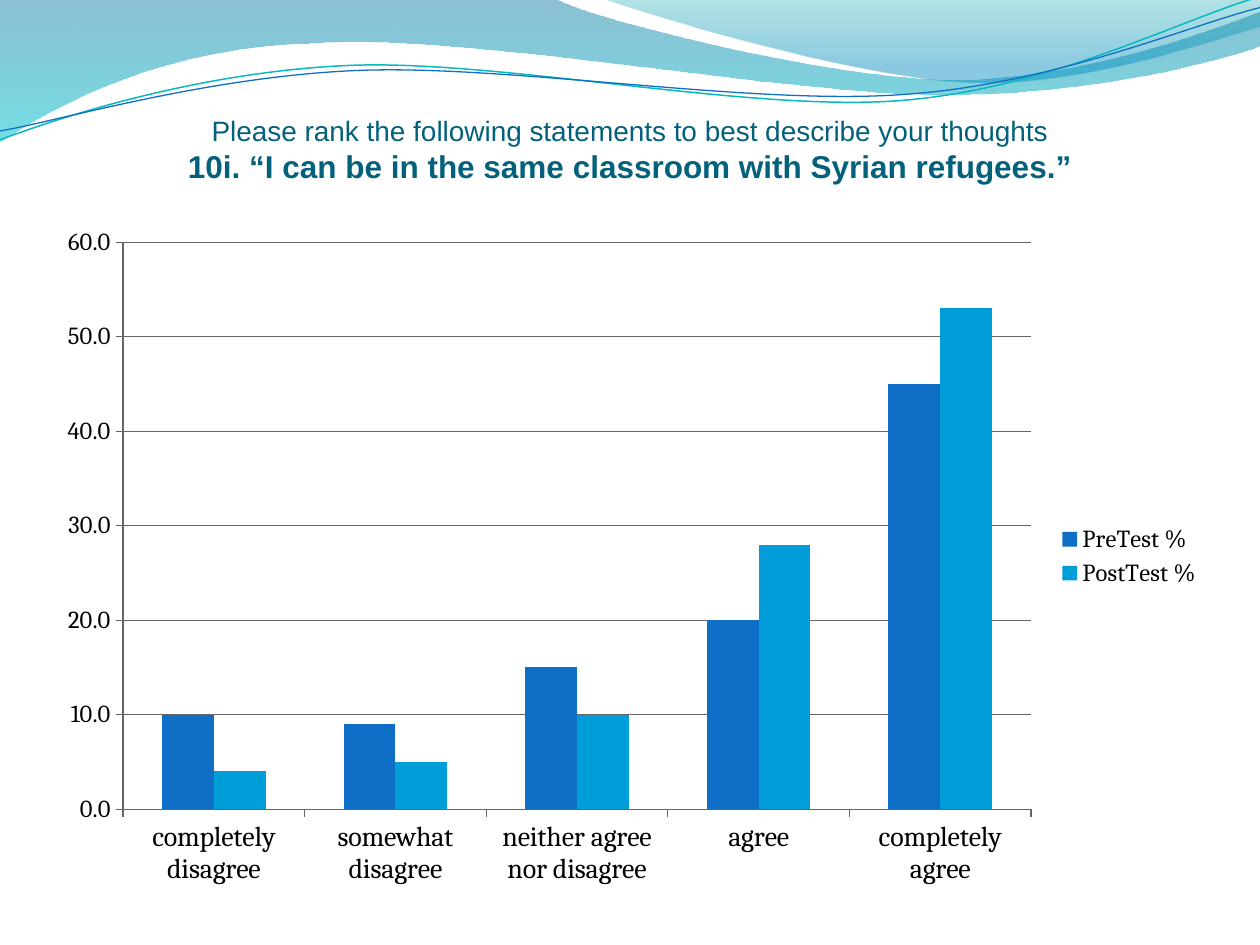
from lxml import etree
from pptx import Presentation
from pptx import util as u
from pptx.chart import data as chart_data
from pptx.dml import color
from pptx.enum import chart as chart_enum
from pptx.enum import text
from pptx.oxml import ns


def rgb(value):
    return color.RGBColor.from_string(value)


def add_curve(slide, start, segments, closed):
    builder = slide.shapes.build_freeform(u.Inches(start[0]), u.Inches(start[1]))
    ends = [(u.Inches(segment[-2]), u.Inches(segment[-1])) for segment in segments]
    builder.add_line_segments(ends, close=closed)
    shape = builder.convert_to_shape()
    shape.shadow.inherit = False
    lines = list(shape._element.iter(ns.qn("a:lnTo")))
    for line, segment in zip(lines, segments):
        if len(segment) == 2:
            continue
        line.clear()
        line.tag = ns.qn("a:cubicBezTo")
        for x, y in zip(segment[::2], segment[1::2]):
            etree.SubElement(line, ns.qn("a:pt"),
                             x=str(u.Inches(x) - shape.left),
                             y=str(u.Inches(y) - shape.top))
    return shape


presentation = Presentation()
presentation.slide_width = u.Inches(10)
presentation.slide_height = u.Inches(7.5)
slide = presentation.slides.add_slide(presentation.slide_layouts[5])

wave_bands = [
    ((0, 0),
     [(4.4, -0.01), (4.76, 0.17, 6.64, 0.63, 7.58, 0.63),
      (8.53, 0.63, 9.58, 0.26, 10, 0.09), (10.01, 0.36),
      (9.83, 0.44, 8.7, 0.76, 7.46, 0.75), (6.22, 0.75, 3.82, 0.28, 2.57, 0.34),
      (1.29, 0.36, 0.46, 0.83, -0.01, 1.13)],
     [(0, "0074A1", 45), (1, "00C6CF", 55)]),
    ((4.79, -0.01),
     [(5.09, 0.11, 6.82, 0.62, 7.69, 0.65), (8.56, 0.69, 9.61, 0.32, 10, 0.21),
      (10, 0)],
     [(0, "00A1A9", 30), (0.8, "008BBF", 45)]),
]
for start, segments, stops in wave_bands:
    band = add_curve(slide, start, segments, True)
    band.line.fill.background()
    band.fill.gradient()
    band.fill.gradient_angle = 270
    for stop, (position, stop_color, _) in zip(band.fill.gradient_stops, stops):
        stop.position = position
        stop.color.rgb = rgb(stop_color)
    stop_elements = band._element.spPr.iter(ns.qn("a:srgbClr"))
    for element, (_, _, opacity) in zip(stop_elements, stops):
        etree.SubElement(element, ns.qn("a:alpha"), val=str(opacity * 1000))

wave_lines = [
    ((0, 1.11),
     [(0.48, 0.93, 1.58, 0.57, 2.77, 0.52), (3.95, 0.47, 5.93, 0.89, 7.13, 0.8),
      (8.33, 0.71, 9.38, 0.15, 9.98, -0.02)],
     "0AB8BF", 0.85),
    ((0, 1.04),
     [(0.47, 0.96, 1.64, 0.61, 2.83, 0.56), (4.03, 0.51, 5.97, 0.84, 7.17, 0.75),
      (8.36, 0.67, 9.41, 0.21, 10, 0.06)],
     "0F6FC6", 0.75),
]
for start, segments, line_color, width in wave_lines:
    wave = add_curve(slide, start, segments, False)
    wave.fill.background()
    wave.line.color.rgb = rgb(line_color)
    wave.line.width = u.Pt(width)

title = slide.shapes.title
slide.shapes._spTree.append(title._element)
title.left, title.top = u.Inches(0.5), u.Inches(0.77)
title.width, title.height = u.Inches(9), u.Inches(0.7)
frame = title.text_frame
frame.auto_size = text.MSO_AUTO_SIZE.NONE
frame.word_wrap = True
frame.vertical_anchor = text.MSO_ANCHOR.BOTTOM
frame.margin_left = frame.margin_right = frame.margin_bottom = 0
frame.margin_top = u.Inches(0.05)
paragraph = frame.paragraphs[0]
paragraph.text = (
    "Please rank the following statements to best describe your thoughts\v"
    "10i. “I can be in the same classroom with Syrian refugees.”"
)
paragraph.alignment = text.PP_ALIGN.CENTER
for run, size, bold in zip(paragraph.runs, (16, 18), (False, True)):
    run.font.name = "Arial"
    run.font.size = u.Pt(size)
    run.font.bold = bold
    run.font.color.rgb = rgb("04617B")

survey = chart_data.CategoryChartData(number_format="0.0")
survey.categories = ["completely disagree", "somewhat disagree",
                     "neither agree nor disagree", "agree", "completely agree"]
survey.add_series("PreTest %", [10, 9, 15, 20, 45])
survey.add_series("PostTest %", [4, 5, 10, 28, 53])
chart = slide.shapes.add_chart(
    chart_enum.XL_CHART_TYPE.COLUMN_CLUSTERED,
    u.Inches(0.35), u.Inches(1.7), u.Inches(9.29), u.Inches(5.43), survey,
).chart
chart.has_title = False
chart.font.name = "Cambria"
chart.font.size = u.Pt(10)
chart.font.color.rgb = rgb("000000")
chart.has_legend = True
chart.legend.position = chart_enum.XL_LEGEND_POSITION.RIGHT
chart.legend.include_in_layout = False
chart.legend.font.size = u.Pt(14)

plot = chart.plots[0]
plot.gap_width = 150
plot.overlap = 0
plot.vary_by_categories = False
for series, series_color in zip(plot.series, ("0F6FC6", "009DD9")):
    series.format.fill.solid()
    series.format.fill.fore_color.rgb = rgb(series_color)

value_axis = chart.value_axis
value_axis.minimum_scale, value_axis.maximum_scale = 0, 60
value_axis.major_unit = 10
value_axis.has_major_gridlines = True
value_axis.tick_labels.number_format = "0.0"
value_axis.tick_labels.number_format_is_linked = False
for axis, size in ((chart.category_axis, 16), (value_axis, 14)):
    axis.major_tick_mark = chart_enum.XL_TICK_MARK.OUTSIDE
    axis.tick_labels.font.size = u.Pt(size)
for part in (chart.category_axis, value_axis, value_axis.major_gridlines):
    part.format.line.color.rgb = rgb("666666")
    part.format.line.width = u.Pt(0.75)

presentation.save("out.pptx")
